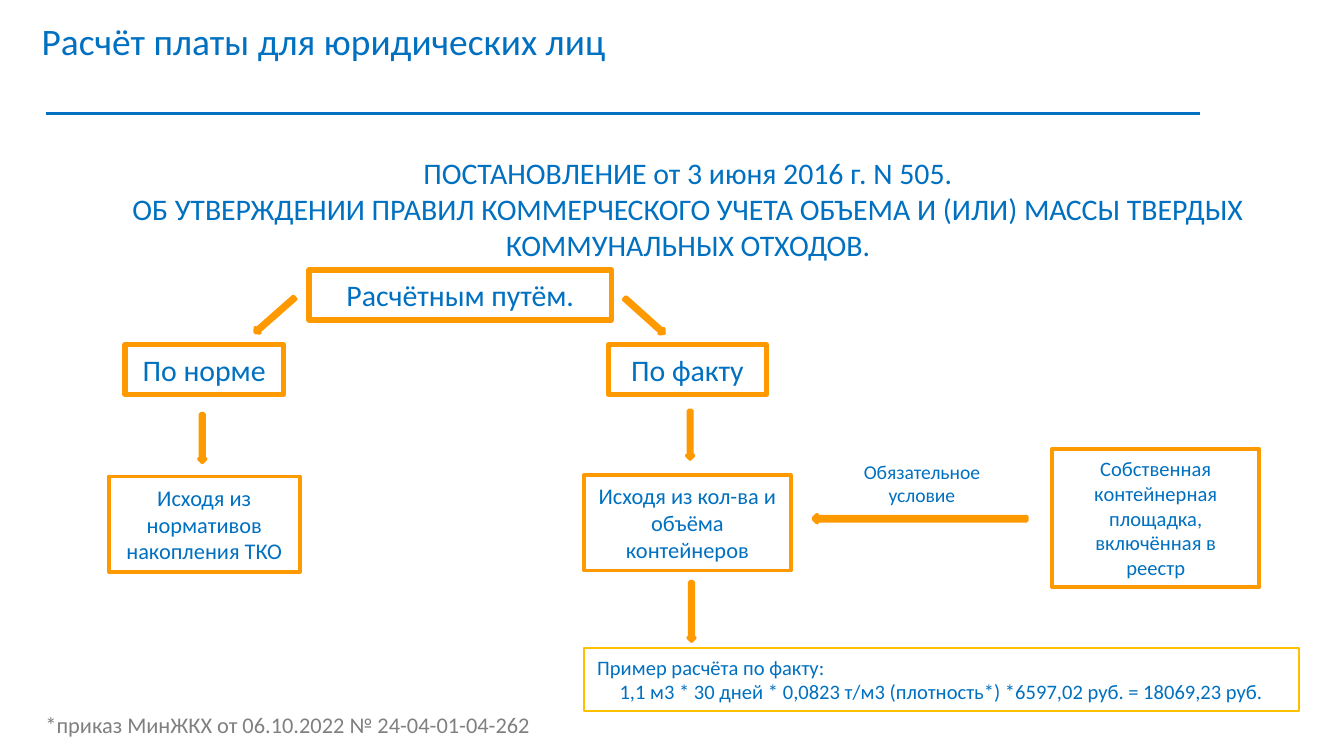
from lxml.etree import SubElement
from pptx import Presentation
from pptx.dml.color import RGBColor
from pptx.enum.shapes import MSO_CONNECTOR, MSO_SHAPE
from pptx.enum.text import MSO_ANCHOR, MSO_AUTO_SIZE, PP_ALIGN
from pptx.oxml.ns import qn
from pptx.util import Inches, Pt

THEME = {
    "font": "Calibri",
    "blue": RGBColor(0x00, 0x70, 0xC0),
    "orange": RGBColor(0xFF, 0x99, 0x00),
    "gold": RGBColor(0xFF, 0xC0, 0x00),
    "gray": RGBColor(0x80, 0x80, 0x80),
    "title": 20, "head": 16, "text": 12, "small": 11, "label": 10.5,
}
LEFT, CENTER = PP_ALIGN.LEFT, PP_ALIGN.CENTER

deck = Presentation()
deck.slide_width = Inches(10)
deck.slide_height = deck.slide_width * 9 // 16
CELL = deck.slide_width / 100  # the grid has 100 columns of square cells


def grid(*cells):
    return [round(n * CELL) for n in cells]


def write(shape, text, size, aligns, color="blue", anchor=MSO_ANCHOR.TOP):
    """Fill a shape with text, one alignment per paragraph."""
    frame = shape.text_frame
    frame.text = text
    frame.word_wrap = True
    frame.auto_size = MSO_AUTO_SIZE.NONE
    frame.vertical_anchor = anchor
    for par, align in zip(frame.paragraphs, aligns):
        props = par._p.get_or_add_pPr()
        props.set("marL", "0")
        props.set("indent", "0")
        SubElement(props, qn("a:buNone"))
        par.alignment = align
        par.space_before = Pt(0)
        for run in par.runs:
            run.font.name = THEME["font"]
            run.font.size = Pt(THEME[size])
            run.font.color.rgb = THEME[color]


slide = deck.slides.add_slide(deck.slide_layouts[1])
shapes = slide.shapes

# Title, decree and rule
title, decree = shapes.title, slide.placeholders[1]
title.left, title.top, title.width, title.height = grid(2.1, 0.85, 86.3, 4.4)
write(title, "Расчёт платы для юридических лиц", "title", [LEFT])

decree.left, decree.top, decree.width, decree.height = grid(8.25, 11, 85.9, 9.1)
write(decree, "ПОСТАНОВЛЕНИЕ от 3 июня 2016 г. N 505.\n"
      "ОБ УТВЕРЖДЕНИИ ПРАВИЛ КОММЕРЧЕСКОГО УЧЕТА ОБЪЕМА И (ИЛИ) МАССЫ ТВЕРДЫХ\n"
      "КОММУНАЛЬНЫХ ОТХОДОВ.", "head", [CENTER] * 3)

rule = shapes.add_connector(MSO_CONNECTOR.STRAIGHT, *grid(3.4, 8.44, 89.3, 8.44))
rule.line.color.rgb = THEME["blue"]
rule.line.width = Pt(1.25)
SubElement(rule._element.spPr, qn("a:effectLst"))

# Boxes: place, text, type size, alignments, line colour, line width
boxes = [
    ((23, 20.1, 22.5, 3.7), "Расчётным путём.", "head", [CENTER], "orange", 3),
    ((9.3, 25.65, 11.8, 3.7), "По норме", "head", [CENTER], "orange", 3),
    ((45.25, 25.65, 11.8, 3.7), "По факту", "head", [CENTER], "orange", 2.5),
    ((8.1, 35.45, 14.2, 7.1), "Исходя из нормативов накопления ТКО",
     "text", [CENTER], "orange", 2),
    ((43.45, 35.35, 15.4, 7.1), "Исходя из кол-ва и объёма контейнеров",
     "text", [CENTER], "orange", 2),
    ((78.3, 33.4, 15.4, 10.3),
     "Собственная контейнерная площадка, включённая в реестр",
     "small", [CENTER], "orange", 2),
    ((43.45, 48.2, 53.2, 4.7), "Пример расчёта по факту:\n"
     "1,1 м3 * 30 дней * 0,0823 т/м3 (плотность*) *6597,02 руб. = 18069,23 руб.",
     "small", [LEFT, CENTER], "gold", 1),
]
for place, text, size, aligns, color, width in boxes:
    box = shapes.add_shape(MSO_SHAPE.RECTANGLE, *grid(*place))
    box.shadow.inherit = False
    box.fill.background()
    box.line.color.rgb = THEME[color]
    box.line.width = Pt(width)
    write(box, text, size, aligns, anchor=MSO_ANCHOR.MIDDLE)

# Block arrows: place before turning, angle
arrows = [
    ((14.8, 30.8, 0.5, 3.6), 0),
    ((51.1, 30.55, 0.5, 3.6), 0),
    ((51.2, 43.3, 0.5, 4.4), 0),
    ((20.2, 21.5, 0.5, 3.9), 48.6),
    ((47.7, 21.55, 0.5, 3.9), 311.9),
    ((68.15, 30.65, 0.6, 15.9), 90),
]
for place, angle in arrows:
    arrow = shapes.add_shape(MSO_SHAPE.DOWN_ARROW, *grid(*place))
    arrow.rotation = angle
    arrow.shadow.inherit = False
    arrow.fill.solid()
    arrow.fill.fore_color.rgb = arrow.line.color.rgb = THEME["orange"]
    arrow.line.width = Pt(2)

# Loose labels
labels = [
    ((62.95, 33.7, 11.3, 4.7), "Обязательное условие", "label", CENTER, "blue"),
    ((2.4, 52.45, 48, 3), "*приказ МинЖКХ от 06.10.2022 № 24-04-01-04-262",
     "text", LEFT, "gray"),
]
for place, text, size, align, color in labels:
    write(shapes.add_textbox(*grid(*place)), text, size, [align], color)

deck.save("out.pptx")
